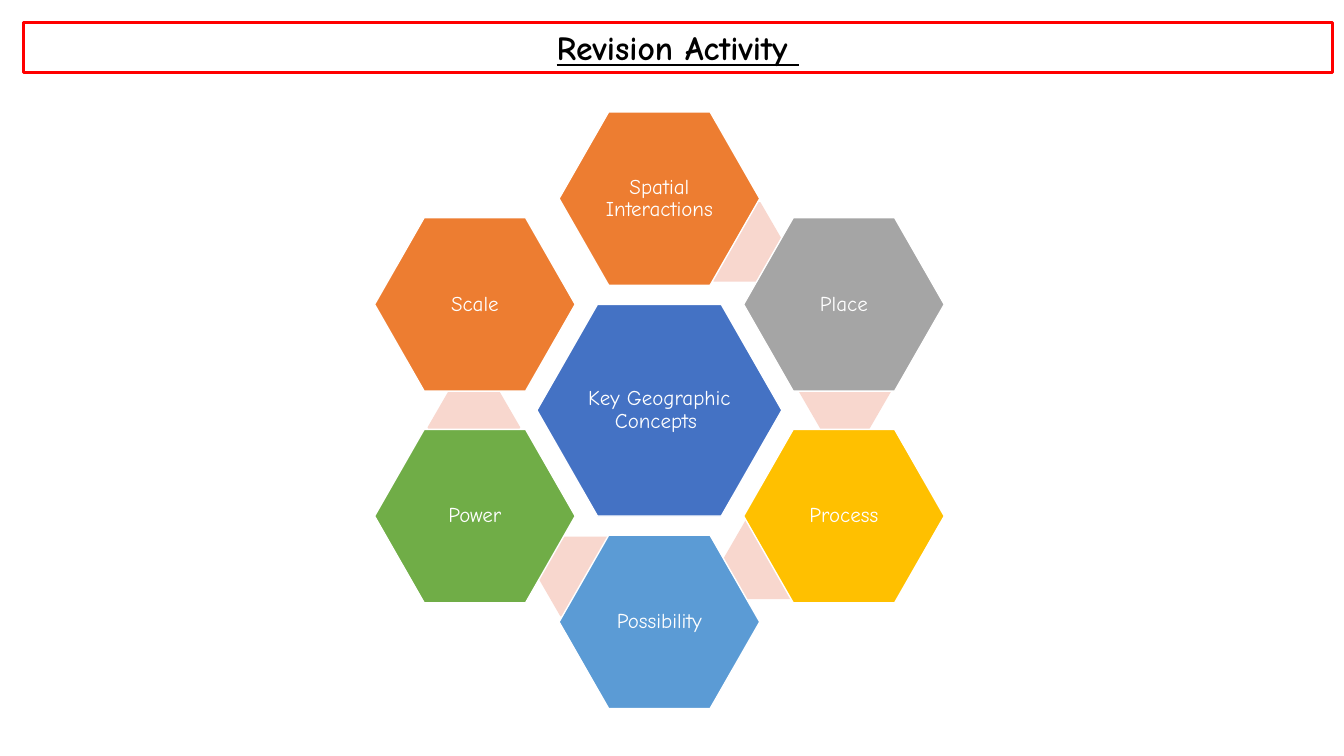
"""Revision slide: six geographic concepts in hexagons around a central one."""
from dataclasses import dataclass

from pptx import Presentation
from pptx.dml.color import RGBColor
from pptx.enum import shapes, text
from pptx.util import Inches, Pt


@dataclass(frozen=True)
class Theme:
    font: str = "Comic Neue"
    title_size: int = 24
    label_size: int = 15
    black: str = "000000"
    white: str = "FFFFFF"
    red: str = "FF0000"
    blue: str = "4472C4"
    orange: str = "ED7D31"
    grey: str = "A5A5A5"
    gold: str = "FFC000"
    sky: str = "5B9BD5"
    green: str = "70AD47"
    link: str = "F8D7CE"


theme = Theme()
prs = Presentation()
prs.slide_width, prs.slide_height = Inches(13.33), Inches(7.5)
s = prs.slides.add_slide(prs.slide_layouts[6])


def add_hexagon(cx, cy, w, h, fill, adj, line=None):
    """Draw a hexagon about its centre."""
    sp = s.shapes.add_shape(shapes.MSO_SHAPE.HEXAGON, Inches(cx - w / 2),
                            Inches(cy - h / 2), Inches(w), Inches(h))
    sp.shadow.inherit = False
    sp.adjustments[0] = adj
    sp.fill.solid()
    sp.fill.fore_color.rgb = RGBColor.from_string(fill)
    if line:
        sp.line.color.rgb = RGBColor.from_string(line)
        sp.line.width = Pt(1)
    else:
        sp.line.fill.background()


def write(tf, words, size, color, **style):
    """Put one centred paragraph in a text frame."""
    tf.word_wrap = True
    tf.vertical_anchor = text.MSO_ANCHOR.MIDDLE
    p = tf.paragraphs[0]
    p.alignment = text.PP_ALIGN.CENTER
    r = p.add_run()
    r.text = words
    r.font.color.rgb = RGBColor.from_string(color)
    for name, value in {"name": theme.font, "size": Pt(size), **style}.items():
        setattr(r.font, name, value)


title = s.shapes.add_shape(shapes.MSO_SHAPE.RECTANGLE, Inches(0.23),
                           Inches(0.22), Inches(12.99), Inches(0.5))
title.shadow.inherit = False
title.fill.background()
title.line.color.rgb = RGBColor.from_string(theme.red)
title.line.width = Pt(2.25)
write(title.text_frame, "Revision Activity ", theme.title_size, theme.black,
      bold=True, underline=True)
title.text_frame.auto_size = text.MSO_AUTO_SIZE.SHAPE_TO_FIT_TEXT

mid_x, mid_y = 6.54, 4.07
step_x, step_y = 1.83, 1.05
core_size, core_label = (2.43, 2.1), (1.62, 1.41)
ring_size, ring_label = (1.99, 1.72), (1.33, 1.15)

concepts = [
    ("Key Geographic Concepts ", theme.blue, 0, 0, None),
    ("Spatial Interactions", theme.orange, 0, -2, (7.31, 2.4)),
    ("Place", theme.grey, 1, -1, (8.38, 3.88)),
    ("Process", theme.gold, 1, 1, (7.63, 5.55)),
    ("Possibility", theme.sky, 0, 2, (5.79, 5.72)),
    ("Power", theme.green, -1, 1, (4.7, 4.24)),
    ("Scale", theme.orange, -1, -1, None),
]

for words, fill, col, row, link in concepts:
    core = (col, row) == (0, 0)
    size, (w, h) = (core_size, core_label) if core else (ring_size, ring_label)
    cx, cy = mid_x + col * step_x, mid_y + row * step_y
    if link:
        add_hexagon(*link, 0.92, 0.79, theme.link, 0.289)
    add_hexagon(cx, cy, *size, fill, 0.286, theme.white)
    label = s.shapes.add_textbox(Inches(cx - w / 2), Inches(cy - h / 2),
                                 Inches(w), Inches(h))
    tf = label.text_frame
    for side in ("left", "top", "right", "bottom"):
        setattr(tf, f"margin_{side}", Inches(0.02))
    write(tf, words, theme.label_size, theme.white)
    tf.paragraphs[0].line_spacing = 0.9

prs.save("out.pptx")
